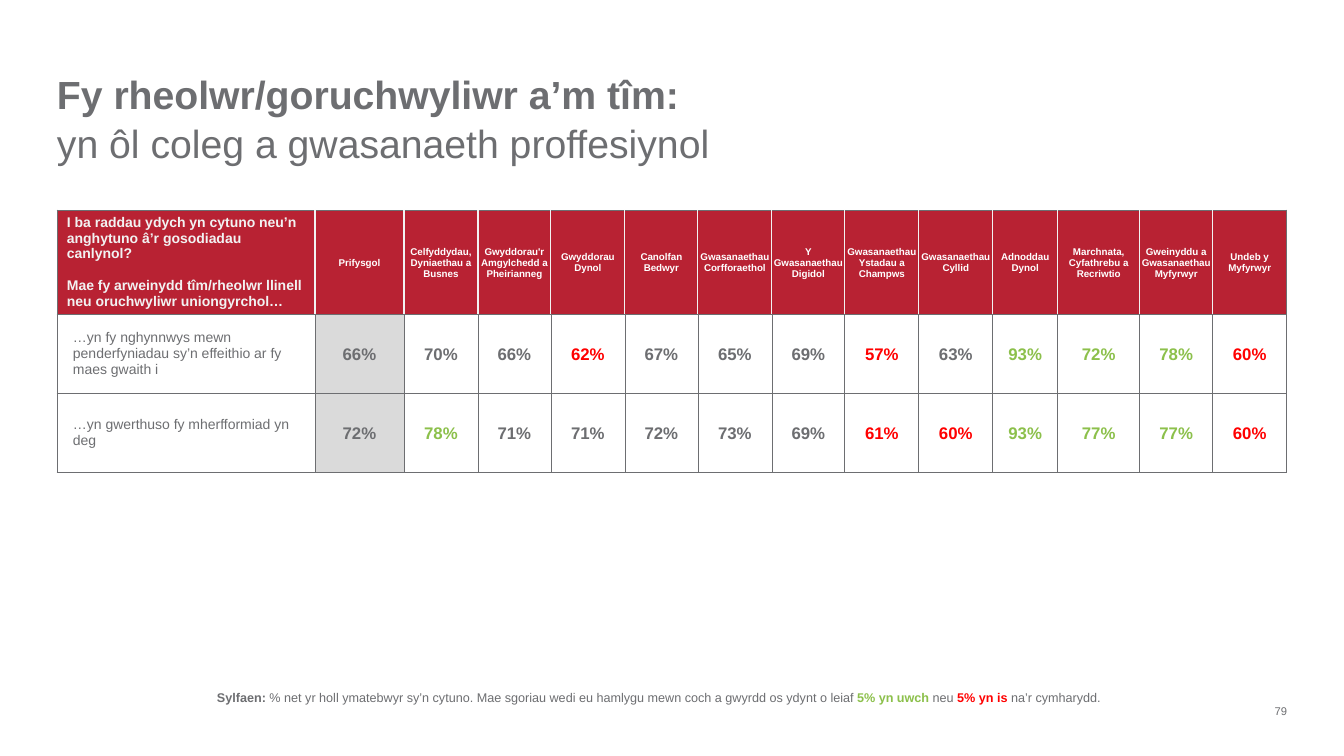
from lxml import etree
from pptx import Presentation
from pptx.dml.color import RGBColor
from pptx.enum.text import MSO_ANCHOR, PP_ALIGN
from pptx.oxml.ns import qn
from pptx.util import Emu, Pt

LEFT, CENTER, RIGHT = PP_ALIGN.LEFT, PP_ALIGN.CENTER, PP_ALIGN.RIGHT
TOP, MIDDLE, BOTTOM = MSO_ANCHOR.TOP, MSO_ANCHOR.MIDDLE, MSO_ANCHOR.BOTTOM

FONT = "Arial"
TITLE_ONLY = 5
EMU_PER_PX = 914400 / 100.8
COLOURS = {
    "grey": "6D6E71",
    "red": "FF0000",
    "green": "8CC04B",
    "header": "B82233",
    "benchmark": "DADADA",
    "pale": "F2F2F2",
    "white": "FFFFFF",
}

COLUMN_WIDTHS = [258, 89, 74, 73, 74, 73, 74, 73, 74, 74, 65, 82, 73, 74]
ROW_HEIGHTS = [104, 79, 79]
QUESTION = [
    "I ba raddau ydych yn cytuno neu’n anghytuno â’r gosodiadau canlynol?",
    "Mae fy arweinydd tîm/rheolwr llinell neu oruchwyliwr uniongyrchol…",
]
UNITS = [
    "Prifysgol",
    "Celfyddydau, Dyniaethau a Busnes",
    "Gwyddorau'r Amgylchedd a Pheirianneg",
    "Gwyddorau Dynol",
    "Canolfan Bedwyr",
    "Gwasanaethau Corfforaethol",
    "Y Gwasanaethau Digidol",
    "Gwasanaethau Ystadau a Champws",
    "Gwasanaethau Cyllid",
    "Adnoddau Dynol",
    "Marchnata, Cyfathrebu a Recriwtio",
    "Gweinyddu a Gwasanaethau Myfyrwyr",
    "Undeb y Myfyrwyr",
]
STATEMENTS = [
    ("…yn fy nghynnwys mewn penderfyniadau sy’n effeithio ar fy maes gwaith i",
     [66, 70, 66, 62, 67, 65, 69, 57, 63, 93, 72, 78, 60],
     {"red": (62, 57, 60), "green": (93, 72, 78)}),
    ("…yn gwerthuso fy mherfformiad yn deg",
     [72, 78, 71, 71, 72, 73, 69, 61, 60, 93, 77, 77, 60],
     {"red": (61, 60), "green": (78, 93, 77)}),
]
FOOTNOTE = [
    ("Sylfaen: ", "grey", True),
    ("% net yr holl ymatebwyr sy’n cytuno. Mae sgoriau wedi eu hamlygu mewn coch "
     "a gwyrdd os ydynt o leiaf ", "grey", False),
    ("5% yn uwch ", "green", True),
    ("neu ", "grey", False),
    ("5% yn is ", "red", True),
    ("na’r cymharydd.", "grey", False),
]


def px(length):
    return Emu(round(length * EMU_PER_PX))


def colour(name):
    return RGBColor.from_string(COLOURS[name])


class SlideBuilder:
    def __init__(self, deck):
        self.slide = deck.slides.add_slide(deck.slide_layouts[TITLE_ONLY])

    def span(self, para, text, size, tone="grey", bold=False):
        span = para.add_run()
        span.text = text
        span.font.name = FONT
        span.font.size = Pt(size)
        span.font.bold = bold
        span.font.color.rgb = colour(tone)

    def frame(self, box, anchor):
        frame = box.text_frame
        frame.margin_left = frame.margin_right = 0
        frame.margin_top = frame.margin_bottom = 0
        frame.word_wrap = True
        frame.vertical_anchor = anchor
        return frame.paragraphs[0]

    def title(self, heading, subheading, left, top, width, height):
        box = self.slide.shapes.title
        box.left, box.top, box.width, box.height = map(px, (left, top, width, height))
        para = self.frame(box, TOP)
        para.alignment = LEFT
        para.line_spacing = 1.05
        self.span(para, heading, 28, bold=True)
        para.add_line_break()
        self.span(para, subheading, 28)

    def text(self, spans, size, left, top, width, height, align=LEFT):
        box = self.slide.shapes.add_textbox(*map(px, (left, top, width, height)))
        para = self.frame(box, BOTTOM)
        para.alignment = align
        for text, tone, bold in spans:
            self.span(para, text, size, tone, bold)

    def table(self, left, top, widths, heights):
        area = map(px, (left, top, sum(widths), sum(heights)))
        table = self.slide.shapes.add_table(len(heights), len(widths), *area).table
        table.first_row = table.horz_banding = False
        for column, width in zip(table.columns, widths):
            column.width = px(width)
        for row, height in zip(table.rows, heights):
            row.height = px(height)
        return table

    def border(self, cell, side, tone, width):
        line = etree.SubElement(cell._tc.get_or_add_tcPr(), qn(f"a:ln{side}"), w=str(Pt(width)))
        fill = etree.SubElement(line, qn("a:solidFill"))
        etree.SubElement(fill, qn("a:srgbClr"), val=COLOURS[tone])

    def cell(self, cell, texts, size, tone, bold, fill, align=CENTER,
             margins=(1, 1, 1, 0), pale_sides=""):
        for side in "LRTB":
            if side in pale_sides:
                self.border(cell, side, "pale", 1)
            else:
                self.border(cell, side, "grey", 0.5)
        cell.fill.solid()
        cell.fill.fore_color.rgb = colour(fill)
        cell.vertical_anchor = MIDDLE
        cell.margin_left, cell.margin_top, cell.margin_right, cell.margin_bottom = map(px, margins)
        for index, text in enumerate(texts):
            para = cell.text_frame.add_paragraph() if index else cell.text_frame.paragraphs[0]
            para.alignment = align
            if index:
                para.space_before = Pt(11.5)
            self.span(para, text, size, tone, bold)


def main():
    deck = Presentation()
    deck.slide_width, deck.slide_height = px(1344), px(756)
    page = SlideBuilder(deck)
    page.title("Fy rheolwr/goruchwyliwr a’m tîm:", "yn ôl coleg a gwasanaeth proffesiynol",
               57, 68, 1119, 94)

    table = page.table(57, 210, COLUMN_WIDTHS, ROW_HEIGHTS)
    page.cell(table.cell(0, 0), QUESTION, 10, "pale", True, "header", LEFT, (10, 5, 10, 5), "R")
    for column, unit in enumerate(UNITS, 1):
        sides = "L" if column == len(UNITS) else "LR"
        page.cell(table.cell(0, column), [unit], 7, "white", True, "header", pale_sides=sides)

    for row, (statement, scores, highlights) in enumerate(STATEMENTS, 1):
        page.cell(table.cell(row, 0), [statement], 10, "grey", False, "white", LEFT, (16, 0, 7, 0))
        tones = {score: tone for tone, marked in highlights.items() for score in marked}
        for column, score in enumerate(scores, 1):
            fill = "benchmark" if column == 1 else "white"
            page.cell(table.cell(row, column), [f"{score}%"], 12, tones.get(score, "grey"), True, fill)

    page.text(FOOTNOTE, 9, 217, 684, 1032, 21)
    page.text([("79", "grey", False)], 8, 1248, 705, 39, 13, RIGHT)
    deck.save("out.pptx")


if __name__ == "__main__":
    main()
